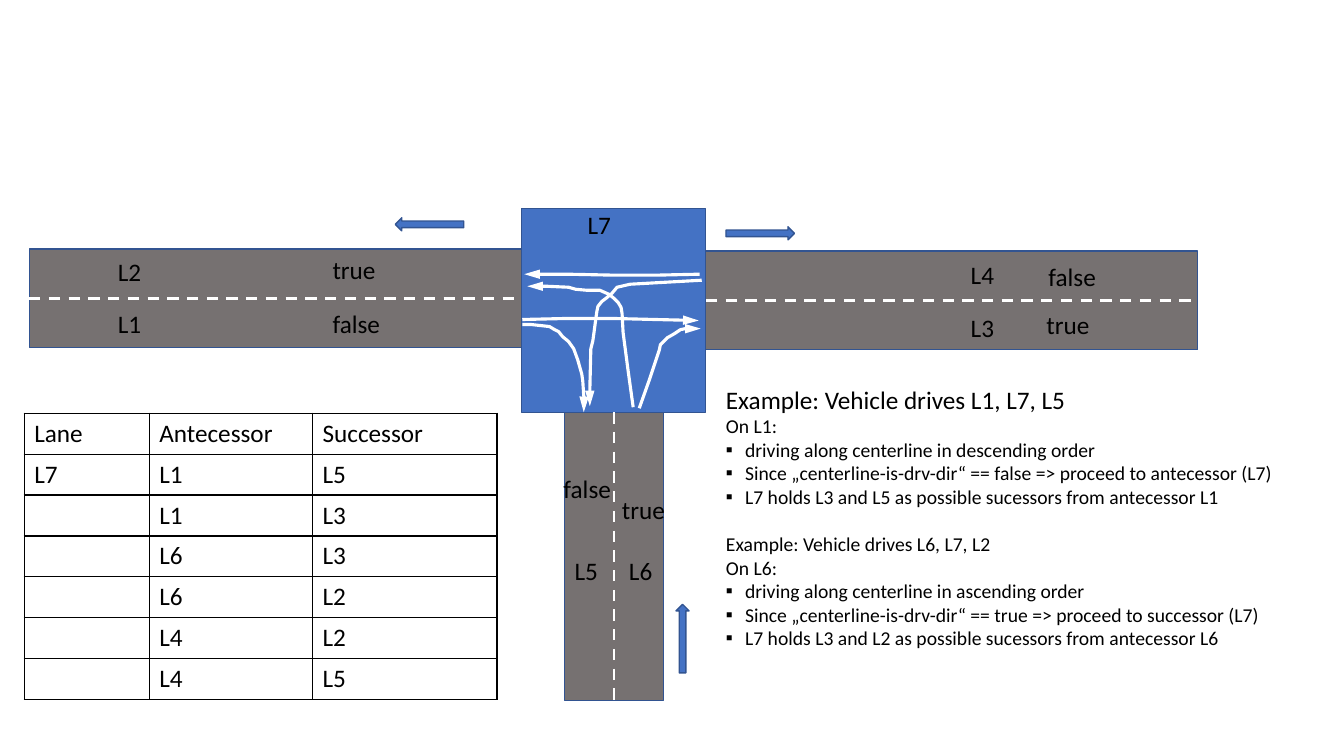
"""Build a slide that explains lane successors at a T-junction."""
from lxml.etree import SubElement
from pptx import Presentation
from pptx.dml.color import RGBColor
from pptx.enum.dml import MSO_LINE
from pptx.enum.shapes import MSO_CONNECTOR as CONN, MSO_SHAPE as SHAPE
from pptx.enum.text import MSO_ANCHOR as ANCHOR, MSO_AUTO_SIZE as AUTO
from pptx.oxml.ns import qn
from pptx.util import Inches, Pt


def paint(fmt, color):
    fmt.solid()
    fmt.fore_color.rgb = RGBColor.from_string(color)


def write(p, text, size=18):
    r = p.add_run()
    r.text = text
    for name, value in {"name": "Calibri", "size": Pt(size)}.items():
        setattr(r.font, name, value)
    paint(r.font.fill, "000000")


prs = Presentation()
prs.slide_width, prs.slide_height = Inches(13.33), Inches(7.5)
s = prs.slides.add_slide(prs.slide_layouts[1])
title = s.shapes.title.element
title.getparent().remove(title)

blocks = [
    ("left road", SHAPE.RECTANGLE, 0.29, 2.47, 4.88, 0.98, 0, "767171"),
    ("right road", SHAPE.RECTANGLE, 7, 2.49, 4.88, 0.98, 0, "767171"),
    ("junction", SHAPE.RECTANGLE, 5.17, 2.07, 1.83, 2.02, 0, "4472C4"),
    ("lower road", SHAPE.RECTANGLE, 5.6, 4.09, 0.98, 2.86, 0, "767171"),
    ("left arrow", SHAPE.RIGHT_ARROW, 3.92, 2.16, 0.68, 0.13, 180, "4472C4"),
    ("right arrow", SHAPE.RIGHT_ARROW, 7.2, 2.25, 0.68, 0.13, 0, "4472C4"),
    ("up arrow", SHAPE.RIGHT_ARROW, 6.43, 6.27, 0.68, 0.13, 270, "4472C4"),
]
parts = {}
for name, kind, x, y, w, h, turn, color in blocks:
    sp = s.shapes.add_shape(kind, Inches(x), Inches(y), Inches(w), Inches(h))
    sp.rotation, sp.shadow.inherit = turn, False
    paint(sp.fill, color)
    paint(sp.line.fill, "325491")
    sp.line.width = Pt(1)
    parts[name] = sp

for road, start, end in [("left road", 1, 3), ("right road", 1, 3), ("lower road", 0, 2)]:
    line = s.shapes.add_connector(CONN.STRAIGHT, 0, 0, 0, 0)
    line.begin_connect(parts[road], start)
    line.end_connect(parts[road], end)
    paint(line.line.fill, "FFFFFF")
    line.line.width, line.line.dash_style = Pt(2), MSO_LINE.DASH
    SubElement(line.element.spPr, qn("a:effectLst"))

drives = {
    "L1 to L5": [(5.18, 3.22), (5.27, 3.22), (5.36, 3.23), (5.45, 3.24), (5.5, 3.27),
                 (5.54, 3.29), (5.58, 3.34), (5.64, 3.39), (5.69, 3.46), (5.73, 3.57),
                 (5.75, 3.64), (5.77, 3.71), (5.78, 3.78), (5.79, 3.93), (5.8, 3.95),
                 (5.79, 4.09)],
    "L4 to L2": [(6.94, 2.72), (6.5, 2.73), (6.1, 2.73), (5.62, 2.72), (5.2, 2.72)],
    "L1 to L3": [(5.18, 3.17), (5.6, 3.16), (6.1, 3.16), (6.5, 3.17), (6.93, 3.18)],
    "L6 to L3": [(6.34, 4.05), (6.44, 3.77), (6.54, 3.47), (6.55, 3.42), (6.58, 3.39),
                 (6.62, 3.35), (6.69, 3.31), (6.75, 3.27), (6.8, 3.26), (6.95, 3.26)],
    "L6 to L2": [(6.28, 4.04), (6.23, 3.68), (6.18, 3.3), (6.17, 3.11), (6.16, 3.05),
                 (6.13, 3), (6.09, 2.96), (6.04, 2.92), (5.95, 2.88), (5.82, 2.88),
                 (5.71, 2.87), (5.64, 2.85), (5.42, 2.84), (5.23, 2.84)],
    "L4 to L5": [(6.96, 2.78), (6.25, 2.82), (6.12, 2.85), (6.07, 2.91), (6.01, 2.96),
                 (5.97, 2.99), (5.93, 3.04), (5.92, 3.09), (5.91, 3.16), (5.89, 3.31),
                 (5.88, 3.38), (5.86, 3.46), (5.85, 3.87), (5.85, 4.03)],
}
for points in drives.values():
    corners = [(Inches(x), Inches(y)) for x, y in points]
    builder = s.shapes.build_freeform(*corners[0])
    builder.add_line_segments(corners[1:], close=False)
    sp = builder.convert_to_shape()
    sp.shadow.inherit = False
    sp.fill.background()
    paint(sp.line.fill, "FFFFFF")
    sp.line.width = Pt(2.25)
    ln = sp.element.spPr.find(qn("a:ln"))
    SubElement(ln, qn("a:round"))
    SubElement(ln, qn("a:tailEnd"), type="triangle", len="lg")

labels = [
    ("L1", 1.07, 3.01), ("L2", 1.07, 2.49), ("L3", 9.53, 3.05), ("L4", 9.53, 2.52),
    ("L5", 5.6, 5.46), ("L6", 6.14, 5.46), ("L7", 5.73, 2.03),
    ("true", 3.2, 2.47), ("false", 3.2, 3.01), ("false", 10.3, 2.54),
    ("true", 10.28, 3.02), ("true", 6.07, 4.85), ("false", 5.49, 4.65),
]
widths = {"true": 0.63, "false": 0.68}
for text, x, y in labels:
    sp = s.shapes.add_textbox(Inches(x), Inches(y), Inches(widths.get(text, 0.44)), Inches(0.4))
    tf = sp.text_frame
    tf.word_wrap, tf.auto_size = False, AUTO.SHAPE_TO_FIT_TEXT
    write(tf.paragraphs[0], text)

rows = [("Lane", "Antecessor", "Successor"), ("L7", "L1", "L5"), ("", "L1", "L3"),
        ("", "L6", "L3"), ("", "L6", "L2"), ("", "L4", "L2"), ("", "L4", "L5")]
height = Inches(2.84)
frame = s.shapes.add_table(len(rows), 3, Inches(0.24), Inches(4.1), Inches(4.69), height)
table = frame.table
table.first_row = table.horz_banding = False
for column, width in zip(table.columns, (1.24, 1.62, 1.83)):
    column.width = Inches(width)
for i, row in enumerate(rows):
    table.rows[i].height = height // len(rows)
    for j, text in enumerate(row):
        cell = table.cell(i, j)
        if text:
            write(cell.text_frame.paragraphs[0], text)
        tcPr = cell._tc.get_or_add_tcPr()
        for side in ("lnL", "lnR", "lnT", "lnB"):
            ln = SubElement(tcPr, qn("a:" + side), w=str(Pt(1)))
            fill = SubElement(ln, qn("a:solidFill"))
            SubElement(fill, qn("a:srgbClr"), val="000000")
        cell.fill.background()

examples = [
    ("Example: Vehicle drives L1, L7, L5", 18, False, 0),
    ("On L1:", 14, False, 0),
    ("driving along centerline in descending order", 14, True, 0),
    ("Since „centerline-is-drv-dir“ == false => proceed to antecessor (L7)", 14, True, 0),
    ("L7 holds L3 and L5 as possible sucessors from antecessor L1", 14, True, 0),
    ("Example: Vehicle drives L6, L7, L2", 14, False, 17),
    ("On L6:", 14, False, 0),
    ("driving along centerline in ascending order", 14, True, 0),
    ("Since „centerline-is-drv-dir“ == true => proceed to successor (L7)", 14, True, 0),
    ("L7 holds L3 and L2 as possible sucessors from antecessor L6", 14, True, 0),
]
body = s.placeholders[1]
box = {"left": 7.1, "top": 3.76, "width": 6.11, "height": 3.06}
for name, value in box.items():
    setattr(body, name, Inches(value))
tf = body.text_frame
frame_format = {"word_wrap": True, "auto_size": AUTO.NONE, "vertical_anchor": ANCHOR.TOP}
for name, value in frame_format.items():
    setattr(tf, name, value)
for i, (text, size, bullet, gap) in enumerate(examples):
    p = tf.add_paragraph() if i else tf.paragraphs[0]
    spacing = {"space_before": Pt(gap), "space_after": Pt(0), "line_spacing": 1.0}
    for name, value in spacing.items():
        setattr(p, name, value)
    write(p, text, size)
    pPr = p._p.get_or_add_pPr()
    indent = Inches(0.19) if bullet else 0
    pPr.set("marL", str(indent))
    pPr.set("indent", str(-indent))
    if bullet:
        SubElement(pPr, qn("a:buFont"), typeface="Calibri")
        SubElement(pPr, qn("a:buChar"), char="▪")
    else:
        SubElement(pPr, qn("a:buNone"))

prs.save("out.pptx")
